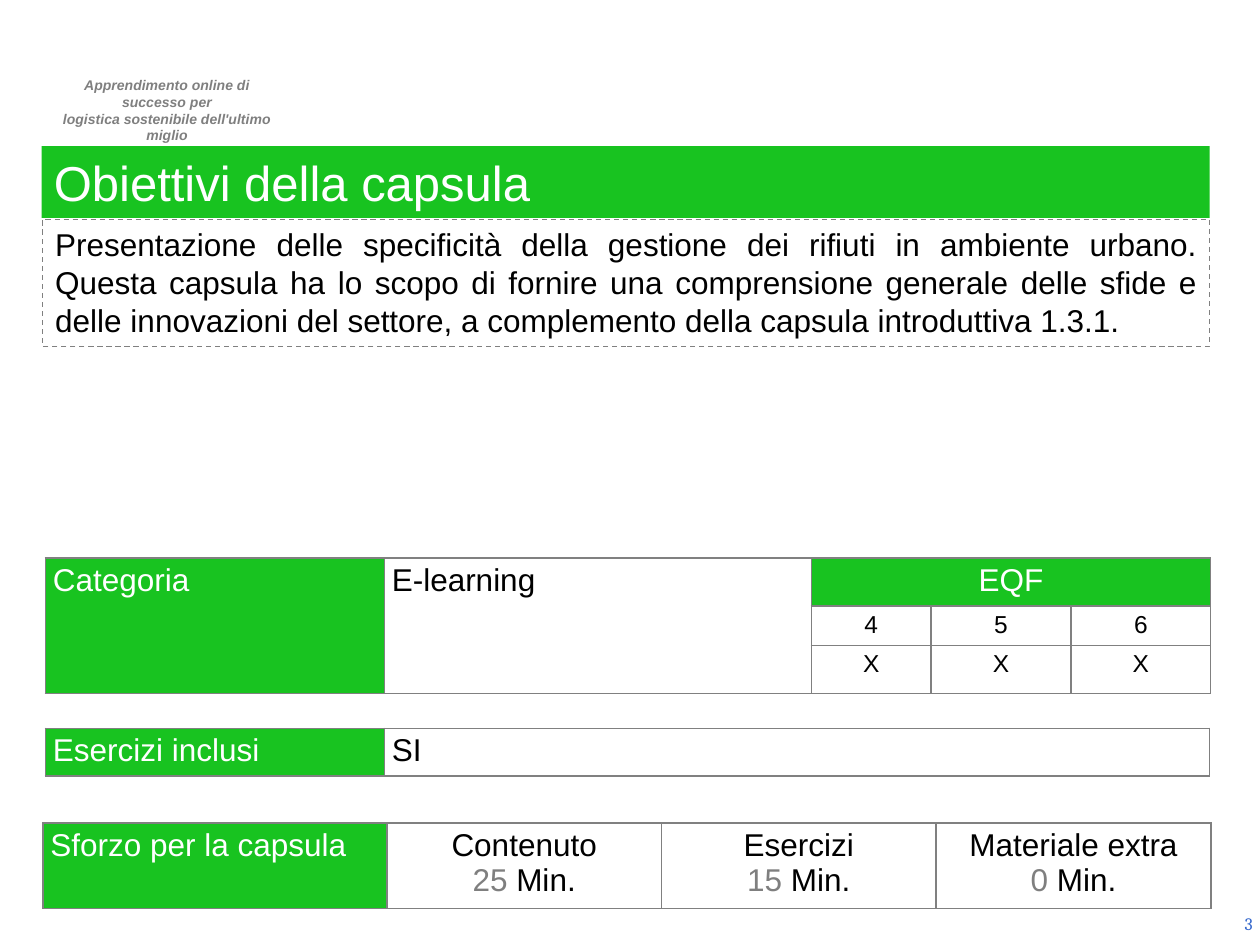
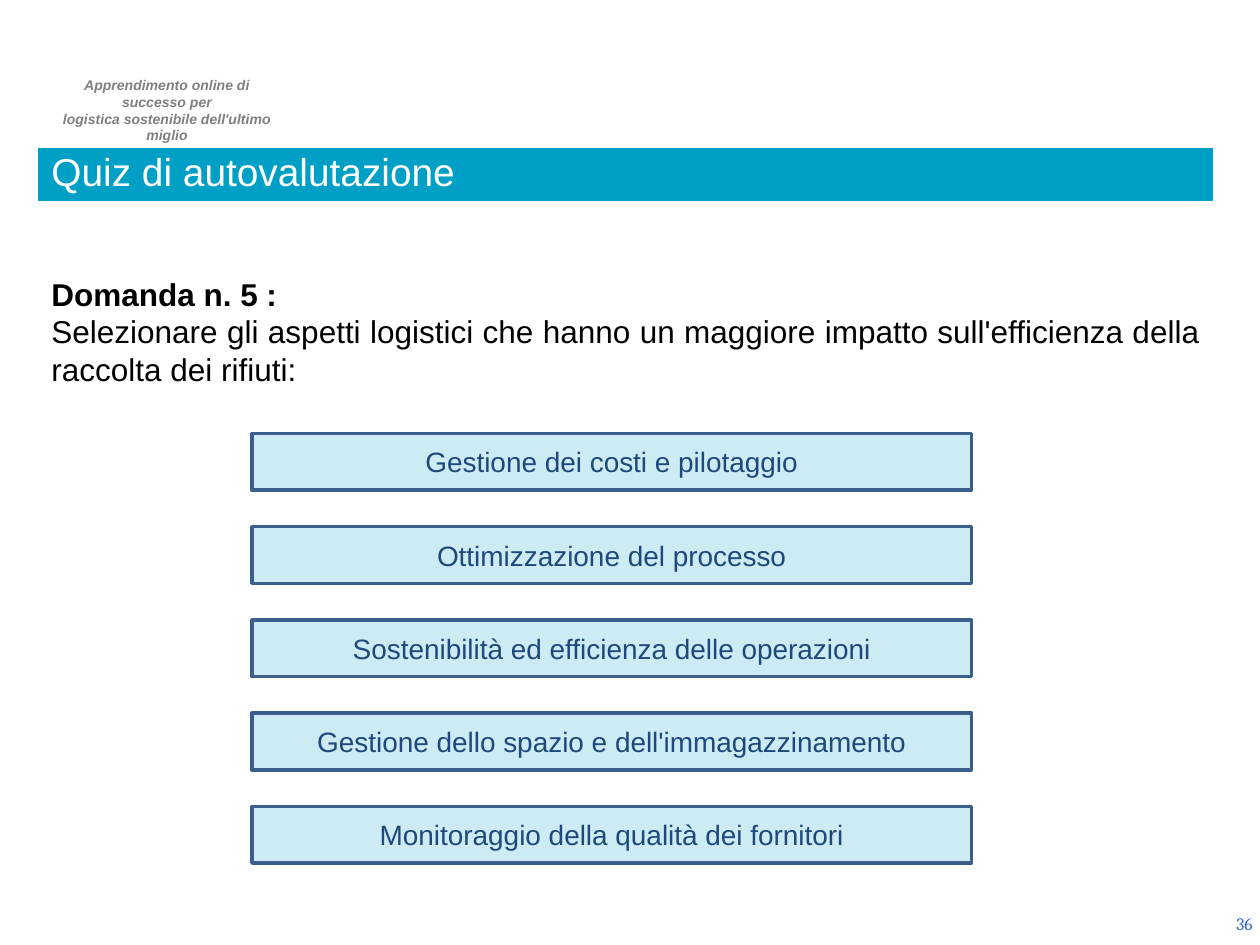
from dataclasses import dataclass

from lxml.etree import SubElement
from pptx import Presentation
from pptx.dml.color import RGBColor
from pptx.enum.dml import MSO_LINE
from pptx.enum.shapes import MSO_SHAPE
from pptx.enum.text import MSO_ANCHOR, PP_ALIGN
from pptx.oxml.ns import qn
from pptx.slide import Slide
from pptx.table import _Cell
from pptx.text.text import TextFrame
from pptx.util import Pt

PX = 9144
GREEN = RGBColor(0x18, 0xC3, 0x20)
BLUE = RGBColor(0x00, 0x9F, 0xC6)
NAVY = RGBColor(0x1F, 0x49, 0x7D)
EDGE = RGBColor(0x3A, 0x5F, 0x8C)
LINK = RGBColor(0x33, 0x66, 0xCC)
GRAY = RGBColor(0x80, 0x80, 0x80)
DIM = RGBColor(0x7F, 0x7F, 0x7F)
BLACK = RGBColor(0x00, 0x00, 0x00)
WHITE = RGBColor(0xFF, 0xFF, 0xFF)
LEFT, MID, RIGHT, FULL = PP_ALIGN.LEFT, PP_ALIGN.CENTER, PP_ALIGN.RIGHT, PP_ALIGN.JUSTIFY


@dataclass(frozen=True)
class Para:
    """A paragraph; lead is a dimmed opening run."""
    text: str
    size: float = 18
    color: RGBColor = BLACK
    align: PP_ALIGN = LEFT
    bold: bool = False
    slant: bool = False
    face: str = "Arial"
    lead: str = ""
    pitch: float | None = None


@dataclass(frozen=True)
class Box:
    """A text box, or a rectangle when it has a fill or a line."""
    left: int
    top: int
    wide: int
    high: int
    paras: tuple[Para, ...]
    fill: RGBColor | None = None
    line: RGBColor | None = None
    weight: float = 0.75
    dash: bool = False
    alpha: int = 100
    anchor: MSO_ANCHOR = MSO_ANCHOR.TOP
    inset: int = 10


@dataclass(frozen=True)
class Cell:
    """A table cell that spans rows and columns."""
    row: int
    col: int
    paras: tuple[Para, ...]
    fill: RGBColor | None = None
    down: int = 1
    along: int = 1


@dataclass(frozen=True)
class Grid:
    """A table with its column widths and row heights."""
    left: int
    top: int
    cols: tuple[int, ...]
    rows: tuple[int, ...]
    cells: tuple[Cell, ...]


def write(frame: TextFrame, paras: tuple[Para, ...]) -> None:
    """Fill a text frame with paragraphs."""
    for i, item in enumerate(paras):
        para = frame.paragraphs[0] if i == 0 else frame.add_paragraph()
        para.alignment = item.align
        if item.pitch:
            para.line_spacing = item.pitch
        font = para.font
        font.name, font.size = item.face, Pt(item.size)
        font.bold, font.italic = item.bold, item.slant
        if item.lead:
            for text, color in ((item.lead, DIM), (item.text, item.color)):
                run = para.add_run()
                run.text = text
                run.font.color.rgb = color
        else:
            font.color.rgb = item.color
            para.add_run().text = item.text


def draw(slide: Slide, box: Box) -> None:
    """Draw a box with its text."""
    place = [n * PX for n in (box.left, box.top, box.wide, box.high)]
    if box.fill or box.line:
        shape = slide.shapes.add_shape(MSO_SHAPE.RECTANGLE, *place)
        shape.shadow.inherit = False
        if box.fill:
            shape.fill.solid()
            shape.fill.fore_color.rgb = box.fill
            if box.alpha < 100:
                color = shape.element.spPr.find(qn("a:solidFill"))[0]
                SubElement(color, qn("a:alpha"), val=str(box.alpha * 1000))
        else:
            shape.fill.background()
        if box.line:
            shape.line.color.rgb = box.line
            shape.line.width = Pt(box.weight)
            if box.dash:
                shape.line.dash_style = MSO_LINE.DASH
        else:
            shape.line.fill.background()
    else:
        shape = slide.shapes.add_textbox(*place)
    frame = shape.text_frame
    frame.word_wrap = True
    frame.vertical_anchor = box.anchor
    frame.margin_left, frame.margin_right = box.inset * PX, 10 * PX
    frame.margin_top = frame.margin_bottom = 5 * PX
    write(frame, box.paras)


def border(cell: _Cell) -> None:
    """Rule all four sides of a cell."""
    props = cell._tc.get_or_add_tcPr()
    for side in ("lnL", "lnR", "lnT", "lnB"):
        line = SubElement(props, qn(f"a:{side}"), w=str(Pt(1)))
        fill = SubElement(line, qn("a:solidFill"))
        SubElement(fill, qn("a:srgbClr"), val=str(GRAY))


def chart(slide: Slide, grid: Grid) -> None:
    """Draw a table."""
    table = slide.shapes.add_table(
        len(grid.rows), len(grid.cols), grid.left * PX, grid.top * PX,
        sum(grid.cols) * PX, sum(grid.rows) * PX).table
    table.first_row = table.horz_banding = False
    for col, wide in zip(table.columns, grid.cols):
        col.width = wide * PX
    for row, high in zip(table.rows, grid.rows):
        row.height = high * PX
    for cell in table.iter_cells():
        border(cell)
        cell.fill.background()
    for item in grid.cells:
        cell = table.cell(item.row, item.col)
        if item.down * item.along > 1:
            cell.merge(table.cell(item.row + item.down - 1, item.col + item.along - 1))
        cell.margin_left = cell.margin_right = 6 * PX
        cell.margin_top = cell.margin_bottom = 4 * PX
        if item.fill:
            cell.fill.solid()
            cell.fill.fore_color.rgb = item.fill
        write(cell.text_frame, item.paras)


def label(text: str, down: int = 1) -> Cell:
    """Make the green cell that opens a table."""
    return Cell(0, 0, (Para(text, color=WHITE, align=FULL),), GREEN, down)


def start(deck: Presentation, page: int) -> Slide:
    """Add a slide with the motto and page number."""
    slide = deck.slides.add_slide(deck.slide_layouts[6])
    motto = ("Apprendimento online di successo per", "logistica sostenibile dell'ultimo miglio")
    draw(slide, Box(29, 56, 203, 37, tuple(
        Para(text, 8, DIM, MID, True, True) for text in motto), inset=14))
    draw(slide, Box(771, 713, 233, 40, (Para(str(page), 10, LINK, RIGHT, face="Cambria"),),
                    anchor=MSO_ANCHOR.MIDDLE))
    return slide


def goals(deck: Presentation) -> None:
    """Build the slide of goals."""
    slide = start(deck, 3)
    draw(slide, Box(33, 116, 927, 57, (Para("Obiettivi della capsula", 28, WHITE),), GREEN))
    draw(slide, Box(34, 174, 926, 101, (Para(
        "Presentazione delle specificità della gestione dei rifiuti in ambiente urbano. "
        "Questa capsula ha lo scopo di fornire una comprensione generale delle sfide e "
        "delle innovazioni del settore, a complemento della capsula introduttiva 1.3.1.",
        align=FULL),), line=GRAY, dash=True))
    marks = tuple(
        Cell(row, col, (Para(text, 14, align=MID),))
        for row, line in enumerate(("456", "XXX"), 1)
        for col, text in enumerate(line, 2))
    chart(slide, Grid(36, 443, (269, 339, 95, 111, 111), (37, 31, 38), (
        label("Categoria", 3),
        Cell(0, 1, (Para("E-learning", align=FULL),), down=3),
        Cell(0, 2, (Para("EQF", color=WHITE, align=MID),), GREEN, along=3),
        *marks)))
    chart(slide, Grid(36, 578, (269, 655), (37,), (
        label("Esercizi inclusi"),
        Cell(0, 1, (Para("SI", align=FULL),)))))
    times = (("Contenuto", 25), ("Esercizi", 15), ("Materiale extra", 0))
    chart(slide, Grid(34, 653, (273, 218, 218, 218), (68,), (
        label("Sforzo per la capsula"),
        *(Cell(0, col, (Para(name, align=MID), Para("Min.", align=MID, lead=f"{time} ")))
          for col, (name, time) in enumerate(times, 1)))))


def quiz(deck: Presentation) -> None:
    """Build the quiz slide."""
    slide = start(deck, 36)
    draw(slide, Box(31, 118, 931, 41, (Para("Quiz di autovalutazione", 22.2, WHITE, pitch=0.8),),
                    BLUE, BLUE, anchor=MSO_ANCHOR.BOTTOM))
    draw(slide, Box(31, 213, 931, 101, (
        Para("Domanda n. 5 :", bold=True),
        Para("Selezionare gli aspetti logistici che hanno un maggiore impatto "
             "sull'efficienza della raccolta dei rifiuti:", align=FULL))))
    picks = (
        "Gestione dei costi e pilotaggio",
        "Ottimizzazione del processo",
        "Sostenibilità ed efficienza delle operazioni",
        "Gestione dello spazio e dell'immagazzinamento",
        "Monitoraggio della qualità dei fornitori",
    )
    for i, text in enumerate(picks):
        draw(slide, Box(200, 344 + 74 * i, 571, 45, (Para(text, 16, NAVY, MID),),
                        BLUE, EDGE, 2, alpha=20, anchor=MSO_ANCHOR.MIDDLE))


def main() -> None:
    """Build and save the deck."""
    deck = Presentation()
    deck.slide_width, deck.slide_height = 1000 * PX, 750 * PX
    goals(deck)
    quiz(deck)
    deck.save("out.pptx")


if __name__ == "__main__":
    main()
